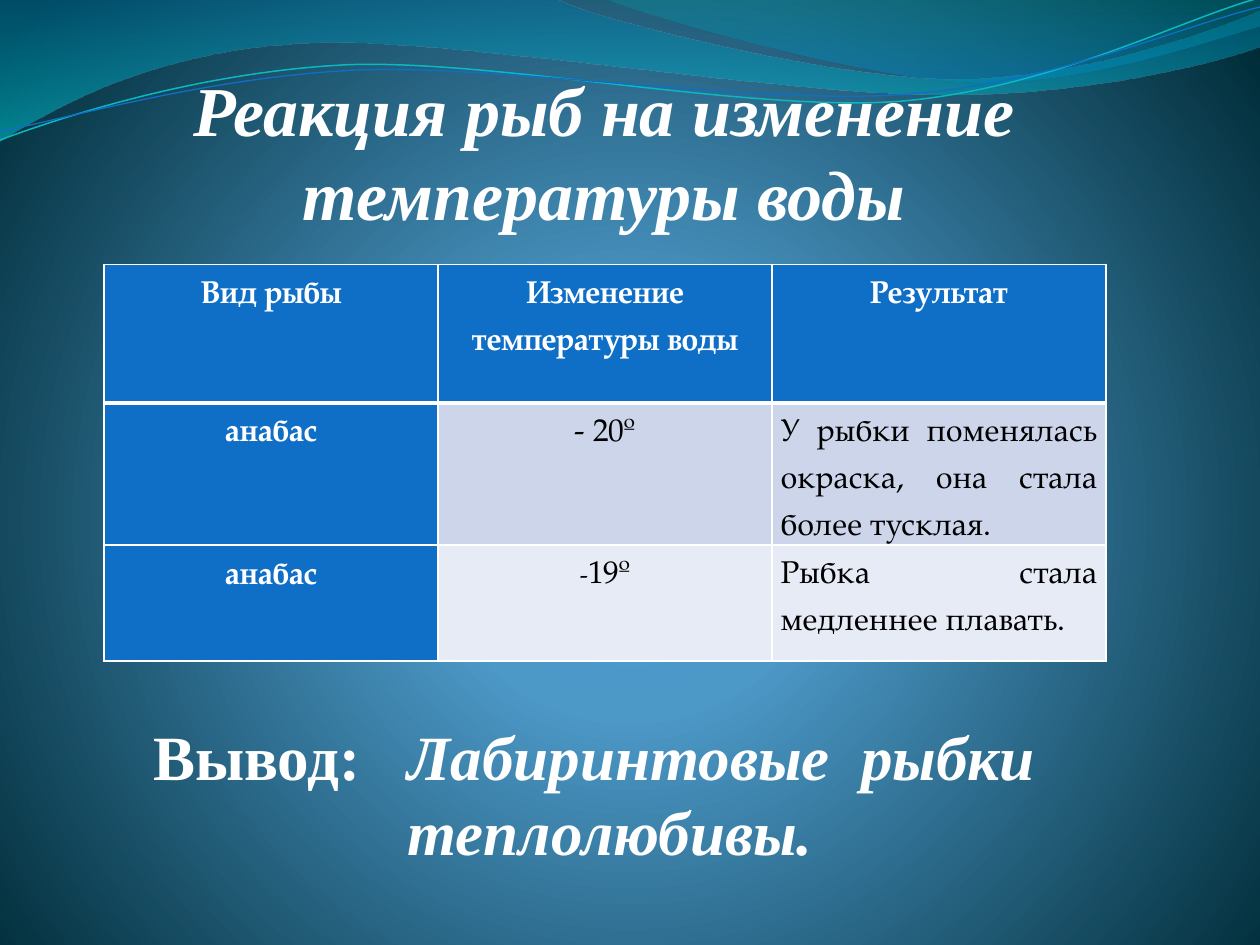
from lxml import etree
from pptx import Presentation
from pptx.dml.color import RGBColor
from pptx.enum.text import MSO_ANCHOR, PP_ALIGN
from pptx.oxml import parse_xml
from pptx.oxml.ns import nsdecls, qn
from pptx.util import Pt

CENTER, JUSTIFY, LEFT = PP_ALIGN.CENTER, PP_ALIGN.JUSTIFY, PP_ALIGN.LEFT
TOP, BOTTOM = MSO_ANCHOR.TOP, MSO_ANCHOR.BOTTOM
SERIF, BOOK = "Times New Roman", "TeX Gyre Pagella"
COLORS = {
    "white": "FFFFFF", "black": "000000", "blue": "0F6FC6", "teal": "0AB8BF",
    "band": "CCD5EA", "pale": "E7EBF5",
    "glow": "4AA0D6", "sea": "4C98C7", "deep": "002C38",
    "wave_top": "0074A1", "wave_foot": "00C6CF",
    "crest_top": "00A1A9", "crest_foot": "008BBF",
}
LINEAR = '<a:lin ang="5400000" scaled="1"/>'
RADIAL = '<a:path path="circle"><a:fillToRect l="10000" t="110000" r="10000" b="100000"/></a:path>'
FILLED_WAVES = [
    ([(0, 0), (317, -1), (343, 12, 478, 45, 546, 45), (614, 45, 690, 19, 720, 6),
      (721, 26), (708, 32, 626, 55, 537, 54), (448, 54, 275, 24, 185, 24),
      (93, 26, 33, 60, -1, 81)],
     [(0, "wave_top", 45), (100, "wave_foot", 55)]),
    ([(345, -1), (366, 8, 491, 45, 554, 47), (616, 50, 692, 23, 720, 15), (720, 0)],
     [(0, "crest_top", 30), (80, "crest_foot", 45)]),
]
LINE_WAVES = [
    ([(0, 80), (35, 67, 114, 41, 199, 37), (284, 34, 427, 64, 513, 58),
      (600, 51, 675, 11, 719, -1)], "teal", 0.85),
    ([(0, 75), (34, 69, 118, 44, 204, 40), (290, 37, 430, 60, 516, 54),
      (602, 48, 674, 15, 720, 4)], "blue", 0.75),
]
HEADINGS = ["Вид рыбы", "Изменение температуры воды", "Результат"]
FINDINGS = [
    ("анабас", [("- 20º", 18)], "У рыбки поменялась окраска, она стала более тусклая.", "band"),
    ("анабас", [("-", 14), ("19º", 18)], "Рыбка стала медленнее плавать.", "pale"),
]


def rgb(name):
    """Return the named colour."""
    return RGBColor.from_string(COLORS[name])


def gradient(stops, direction):
    """Return a gradient fill made of (position, colour, opacity) stops."""
    marks = "".join(
        f'<a:gs pos="{position * 1000}"><a:srgbClr val="{COLORS[name]}">'
        f'<a:alpha val="{opacity * 1000}"/></a:srgbClr></a:gs>'
        for position, name, opacity in stops)
    return parse_xml(f'<a:gradFill {nsdecls("a")} rotWithShape="1">'
                     f'<a:gsLst>{marks}</a:gsLst>{direction}</a:gradFill>')


def paint_background(page):
    """Fill the page with a round glow."""
    fill = page.background.fill
    fill.solid()
    solid = page.background._cSld.bg.bgPr.find(qn("a:solidFill"))
    stops = [(0, "glow", 100), (25, "sea", 100), (100, "deep", 100)]
    solid.getparent().replace(solid, gradient(stops, RADIAL))


def add_wave(page, steps, closed):
    """Draw one outline of straight steps and cubic curves."""
    points = [(Pt(step[i]), Pt(step[i + 1])) for step in steps for i in range(0, len(step), 2)]
    builder = page.shapes.build_freeform(*points[0])
    builder.add_line_segments(points[1:], close=closed)
    wave = builder.convert_to_shape()
    segments = list(wave.element.iter(qn("a:lnTo")))
    for step in steps[1:]:
        used, segments = segments[:len(step) // 2], segments[len(step) // 2:]
        if len(used) == 3:
            curve = etree.Element(qn("a:cubicBezTo"))
            used[0].addprevious(curve)
            for segment in used:
                curve.append(segment[0])
                segment.getparent().remove(segment)
    wave.shadow.inherit = False
    wave.fill.background()
    return wave


def add_waves(page):
    """Draw the waves along the top edge."""
    for steps, stops in FILLED_WAVES:
        wave = add_wave(page, steps, True)
        wave.line.fill.background()
        properties = wave.element.spPr
        empty = properties.find(qn("a:noFill"))
        properties.replace(empty, gradient(stops, LINEAR))
    for steps, color, width in LINE_WAVES:
        wave = add_wave(page, steps, False)
        wave.line.color.rgb = rgb(color)
        wave.line.width = Pt(width)


def add_span(para, text, font, size, color="white", bold=True, italic=False):
    """Append one formatted run and return it."""
    span = para.add_run()
    span.text = text
    span.font.name, span.font.size = font, Pt(size)
    span.font.bold, span.font.italic = bold, italic
    span.font.color.rgb = rgb(color)
    return span


def add_text(page, box, anchor, align, spacing):
    """Place a wrapping text box and return its paragraph."""
    frame = page.shapes.add_textbox(*map(Pt, box)).text_frame
    frame.word_wrap = True
    frame.vertical_anchor = anchor
    frame.margin_left = frame.margin_right = frame.margin_top = frame.margin_bottom = 0
    para = frame.paragraphs[0]
    para.alignment = align
    para.line_spacing = Pt(spacing)
    return para


def add_title(page, box):
    """Write the page title."""
    para = add_text(page, box, BOTTOM, CENTER, 48)
    add_span(para, "Реакция рыб на изменение температуры воды", SERIF, 40, italic=True)


def add_conclusion(page, box, indent):
    """Write the conclusion with a hanging label and one widened word gap."""
    para = add_text(page, box, TOP, LEFT, 43)
    properties = para._p.get_or_add_pPr()
    properties.set("marL", str(Pt(indent)))
    properties.set("indent", str(-Pt(indent)))
    add_span(para, "Вывод:\t", SERIF, 36)
    add_span(para, "Лабиринтовые", SERIF, 36, italic=True)
    gap = add_span(para, " ", SERIF, 36, italic=True)
    gap.font._element.set("spc", "900")
    add_span(para, "рыбки теплолюбивы.", SERIF, 36, italic=True)


def set_borders(cell, top, bottom):
    """Give a cell white borders."""
    properties = cell._tc.get_or_add_tcPr()
    widths = {"lnL": 1, "lnR": 1, "lnT": top, "lnB": bottom}
    for index, (side, width) in enumerate(widths.items()):
        line = etree.Element(qn(f"a:{side}"), w=str(Pt(width)))
        fill = etree.SubElement(line, qn("a:solidFill"))
        etree.SubElement(fill, qn("a:srgbClr"), val=COLORS["white"])
        properties.insert(index, line)


def fill_cell(cell, spans, fill, align=CENTER, head=False):
    """Write the (text, size) spans of a cell and colour it."""
    cell.margin_left = cell.margin_right = Pt(5)
    cell.margin_top = cell.margin_bottom = 0
    cell.fill.solid()
    cell.fill.fore_color.rgb = rgb(fill)
    para = cell.text_frame.paragraphs[0]
    para.alignment, para.line_spacing = align, Pt(27)
    for text, size in spans:
        add_span(para, text, BOOK, size, "white" if head else "black", head)


def add_findings(page, box):
    """Build the table of temperature changes and results."""
    table = page.shapes.add_table(len(FINDINGS) + 1, len(HEADINGS), *map(Pt, box)).table
    for column in table.columns:
        column.width = Pt(box[2] / len(HEADINGS))
    for row, height in zip(table.rows, (79.2, 81.2, 66.4)):
        row.height = Pt(height)
    for column, heading in enumerate(HEADINGS):
        fill_cell(table.cell(0, column), [(heading, 18)], "blue", head=True)
    for row, (fish, change, result, shade) in enumerate(FINDINGS, 1):
        fill_cell(table.cell(row, 0), [(fish, 18)], "blue", head=True)
        fill_cell(table.cell(row, 1), change, shade)
        fill_cell(table.cell(row, 2), [(result, 18)], shade, JUSTIFY)
    for index, row in enumerate(table.rows):
        for cell in row.cells:
            set_borders(cell, 3 if index == 1 else 1, 3 if index == 0 else 1)


def main():
    """Build the deck and save it."""
    deck = Presentation()
    deck.slide_width, deck.slide_height = Pt(720), Pt(540)
    page = deck.slides.add_slide(deck.slide_layouts[6])
    paint_background(page)
    add_waves(page)
    add_title(page, (36, 49, 618, 85))
    add_conclusion(page, (87.5, 410, 560, 90), 145.5)
    add_findings(page, (59.5, 151, 572.4, 226.8))
    deck.save("out.pptx")


if __name__ == "__main__":
    main()
